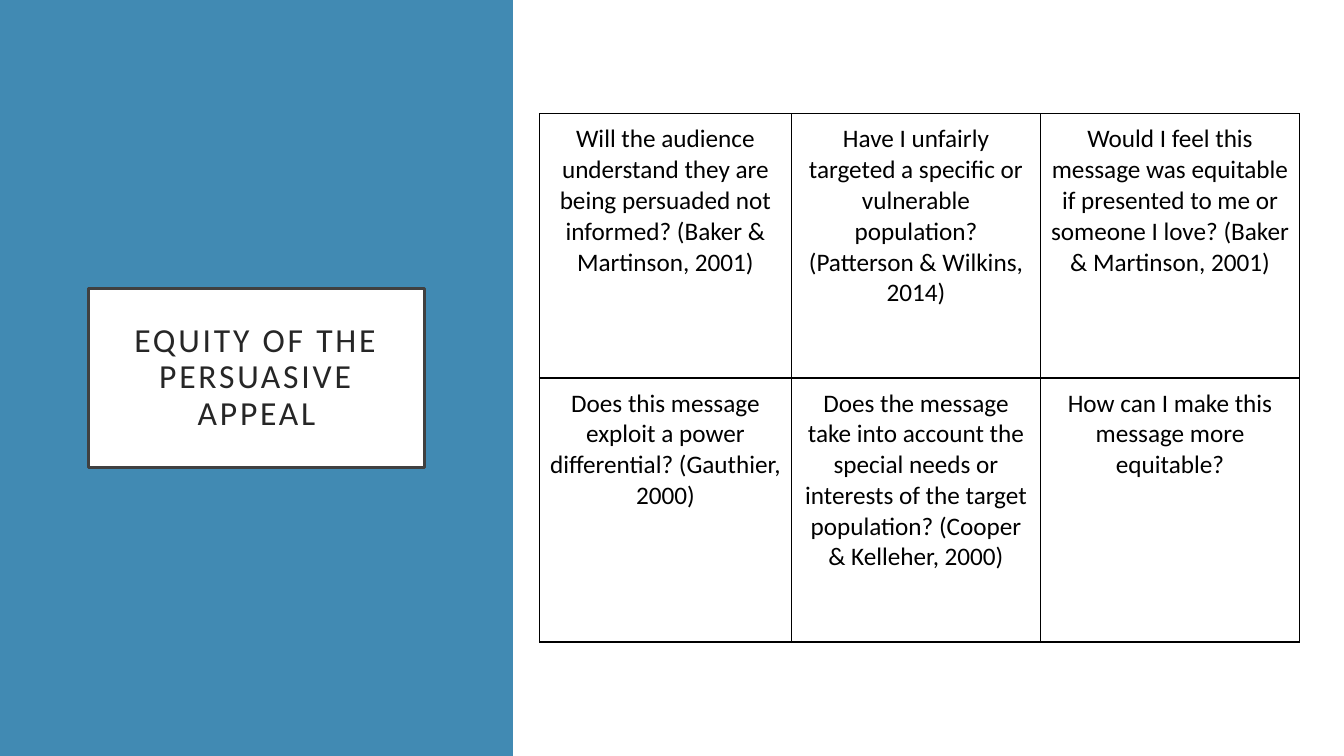
from lxml.etree import SubElement
from pptx import Presentation
from pptx.dml.color import RGBColor
from pptx.enum.shapes import MSO_SHAPE
from pptx.enum.text import MSO_ANCHOR, MSO_AUTO_SIZE, PP_ALIGN
from pptx.oxml.ns import qn
from pptx.util import Inches, Pt

# Content
TITLE = "EQUITY OF THE PERSUASIVE APPEAL"
QUESTIONS = [
    ["Will the audience understand they are being persuaded not informed? (Baker & Martinson, 2001)",
     "Have I unfairly targeted a specific or vulnerable population? (Patterson & Wilkins, 2014)",
     "Would I feel this message was equitable if presented to me or someone I love? (Baker & Martinson, 2001)"],
    ["Does this message exploit a power differential? (Gauthier, 2000)",
     "Does the message take into account the special needs or interests of the target population? "
     "(Cooper & Kelleher, 2000)",
     "How can I make this message more equitable?"],
]

# Format
COLORS = {"blue": "418AB3", "white": "FFFFFF", "frame": "404040",
          "title": "262626", "text": "000000"}
FONT = "Calibri"
WIDTH, HEIGHT = 13.33, 7.5
PANEL_LEFT = 5.09
TITLE_BOX = (0.88, 2.86, 3.33, 1.78)
TABLE_LEFT, TABLE_TOP = 5.35, 1.13
COLUMNS = [2.5, 2.47, 2.57]
ROW_HEIGHT = 2.62
TITLE_FRAME = {"margin_left": Inches(0.3), "margin_right": Inches(0.3),
               "margin_top": Inches(0.2), "margin_bottom": Inches(0.2),
               "vertical_anchor": MSO_ANCHOR.MIDDLE, "word_wrap": True,
               "auto_size": MSO_AUTO_SIZE.NONE}
CELL_FORMAT = {side: Inches(0.1) for side in
               ("margin_left", "margin_right", "margin_top", "margin_bottom")}
CELL_FORMAT["vertical_anchor"] = MSO_ANCHOR.TOP


def rgb(name):
    return RGBColor.from_string(COLORS[name])


def set_all(target, values):
    for name, value in values.items():
        setattr(target, name, value)


def write(tf, text, size, color, spacing=1.0):
    p = tf.paragraphs[0]
    set_all(p, {"alignment": PP_ALIGN.CENTER, "line_spacing": spacing})
    r = p.add_run()
    r.text = text
    set_all(r.font, {"name": FONT, "size": Pt(size), "bold": False})
    r.font.color.rgb = rgb(color)
    return r


def add_borders(cell, color, width):
    tc_pr = cell._tc.get_or_add_tcPr()
    for i, side in enumerate(("lnL", "lnR", "lnT", "lnB")):
        ln = SubElement(tc_pr, qn(f"a:{side}"), w=str(Pt(width)))
        tc_pr.insert(i, ln)
        fill = SubElement(ln, qn("a:solidFill"))
        SubElement(fill, qn("a:srgbClr"), val=COLORS[color])


def main():
    prs = Presentation()
    prs.slide_width, prs.slide_height = Inches(WIDTH), Inches(HEIGHT)
    s = prs.slides.add_slide(prs.slide_layouts[5])
    s.background.fill.solid()
    s.background.fill.fore_color.rgb = rgb("blue")

    # Framed title
    title = s.shapes.title
    set_all(title, dict(zip(("left", "top", "width", "height"), map(Inches, TITLE_BOX))))
    title.fill.solid()
    title.fill.fore_color.rgb = rgb("white")
    title.line.color.rgb = rgb("frame")
    title.line.width = Pt(2.5)
    set_all(title.text_frame, TITLE_FRAME)
    r = write(title.text_frame, TITLE, 24, "title", 0.9)
    r.font._element.set("spc", "200")

    # White panel
    panel = s.shapes.add_shape(MSO_SHAPE.RECTANGLE, Inches(PANEL_LEFT), 0,
                               Inches(WIDTH - PANEL_LEFT), Inches(HEIGHT))
    panel.shadow.inherit = False
    panel.fill.solid()
    panel.fill.fore_color.rgb = rgb("white")
    panel.line.fill.background()

    # Question grid
    table = s.shapes.add_table(len(QUESTIONS), len(COLUMNS), Inches(TABLE_LEFT), Inches(TABLE_TOP),
                               Inches(sum(COLUMNS)), Inches(ROW_HEIGHT * len(QUESTIONS))).table
    set_all(table, {"first_row": False, "horz_banding": False})
    for column, width in zip(table.columns, COLUMNS):
        column.width = Inches(width)
    for row, questions in zip(table.rows, QUESTIONS):
        row.height = Inches(ROW_HEIGHT)
        for cell, question in zip(row.cells, questions):
            set_all(cell, CELL_FORMAT)
            cell.fill.background()
            write(cell.text_frame, question, 18, "text")
            add_borders(cell, "text", 1)

    prs.save("out.pptx")


if __name__ == "__main__":
    main()
